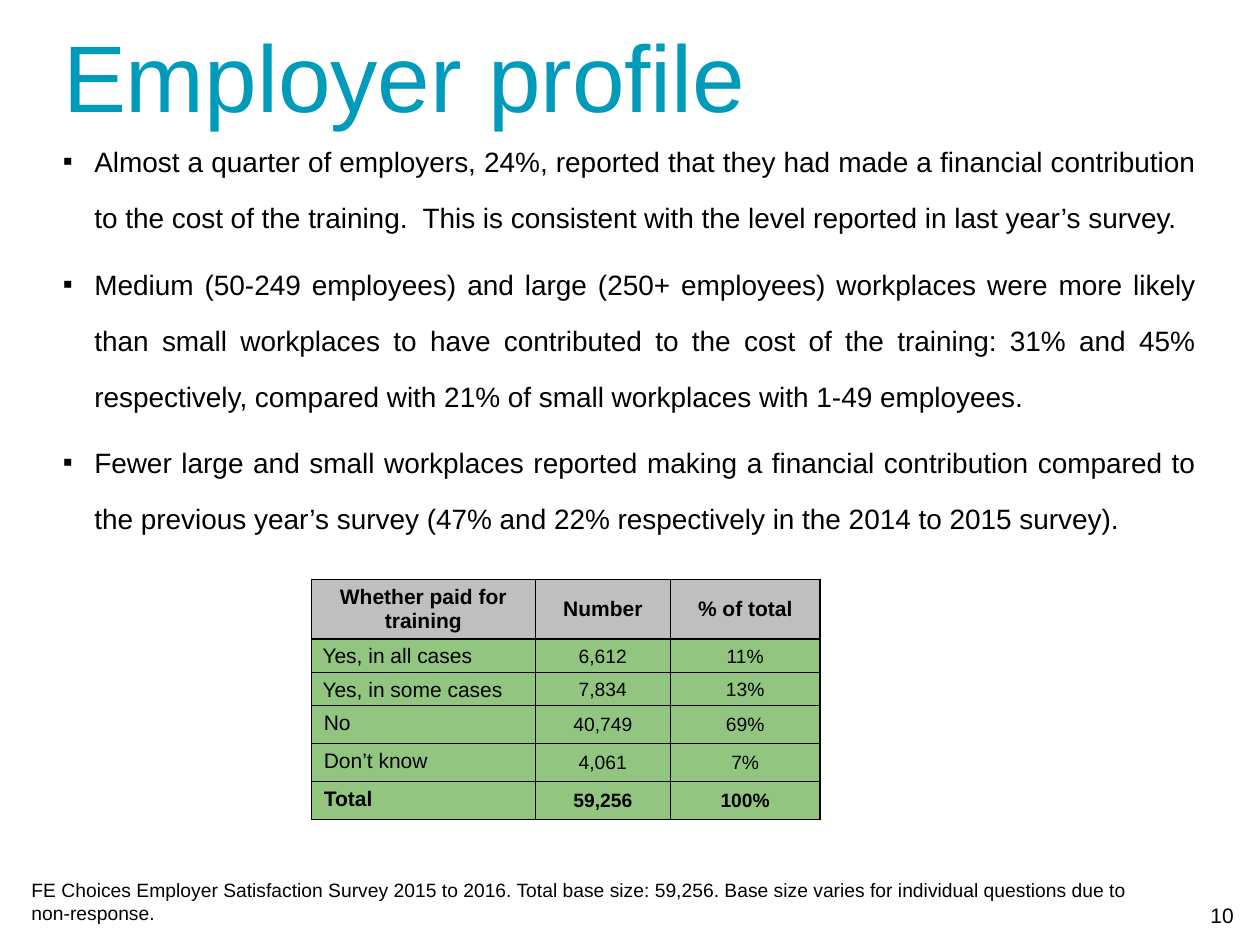
from typing import NamedTuple

from lxml.etree import SubElement
from pptx import Presentation
from pptx.dml.color import RGBColor
from pptx.enum.text import MSO_ANCHOR, MSO_AUTO_SIZE, PP_ALIGN
from pptx.oxml.ns import qn
from pptx.util import Inches, Pt

COLORS = {"title": "009BBB", "text": "000000", "header": "BFBFBF", "body": "92C680"}
FONT = "Arial"
GRID = Inches(0.1)  # the slide is 100 columns by 75 rows

BULLETS = [
    "Almost a quarter of employers, 24%, reported that they had made a financial "
    "contribution to the cost of the training.  This is consistent with the level "
    "reported in last year’s survey.",
    "Medium (50-249 employees) and large (250+ employees) workplaces were more likely "
    "than small workplaces to have contributed to the cost of the training: 31% and 45% "
    "respectively, compared with 21% of small workplaces with 1-49 employees.",
    "Fewer large and small workplaces reported making a financial contribution compared "
    "to the previous year’s survey (47% and 22% respectively in the 2014 to 2015 survey).",
]
SOURCE_NOTE = (
    "FE Choices Employer Satisfaction Survey 2015 to 2016. Total base size: 59,256. "
    "Base size varies for individual questions due to non-response."
)


class Area(NamedTuple):
    column: float
    row: float
    columns: float
    rows: float


class Insets(NamedTuple):
    left: float = 0
    top: float = 0
    right: float = 0
    bottom: float = 0


class PaymentRow(NamedTuple):
    answer: str
    number: str
    share: str
    height: float


BOX_INSETS = Insets(1, 0.5, 1, 0.5)
LABEL_INSETS = Insets(0.9, 0.1, 0.1, 0)
VALUE_INSETS = Insets(0.1, 0.1, 0.1, 0)
TABLE_AREA = Area(24.7, 46, 40.4, 19)
COLUMN_WIDTHS = [17.8, 10.7, 11.9]
PAYMENTS = [
    PaymentRow("Whether paid for training", "Number", "% of total", 4.7),
    PaymentRow("Yes, in all cases", "6,612", "11%", 2.7),
    PaymentRow("Yes, in some cases", "7,834", "13%", 2.6),
    PaymentRow("No", "40,749", "69%", 3),
    PaymentRow("Don’t know", "4,061", "7%", 3),
    PaymentRow("Total", "59,256", "100%", 3),
]


def grid(cells: float) -> int:
    return round(cells * GRID)


def place(shape, area: Area) -> None:
    shape.left, shape.top, shape.width, shape.height = map(grid, area)


def set_insets(holder, insets: Insets) -> None:
    """Set the margins of a text frame or a table cell."""
    holder.margin_left, holder.margin_top = grid(insets.left), grid(insets.top)
    holder.margin_right, holder.margin_bottom = grid(insets.right), grid(insets.bottom)


def write(frame, paragraphs: list[str], *, size: float, color: str = "text",
          bold: bool = False, align=PP_ALIGN.LEFT, line: float | None = None,
          after: float = 0, bullet: str = "") -> None:
    for index, wording in enumerate(paragraphs):
        paragraph = frame.add_paragraph() if index else frame.paragraphs[0]
        paragraph.alignment = align
        paragraph.space_before, paragraph.space_after = Pt(0), Pt(after)
        if line:
            paragraph.line_spacing = Pt(line)
        if bullet:
            properties = paragraph._p.get_or_add_pPr()
            properties.set("marL", str(Inches(0.25)))
            properties.set("indent", str(-Inches(0.25)))
            SubElement(properties, qn("a:buFont"), typeface=FONT)
            SubElement(properties, qn("a:buChar"), char=bullet)
        run = paragraph.add_run()
        run.text = wording
        run.font.name, run.font.size, run.font.bold = FONT, Pt(size), bold
        run.font.color.rgb = RGBColor.from_string(COLORS[color])


def add_text(slide, area: Area, paragraphs: list[str], *, insets: Insets = BOX_INSETS,
             anchor=MSO_ANCHOR.TOP, **text_format) -> None:
    frame = slide.shapes.add_textbox(*map(grid, area)).text_frame
    frame.word_wrap = True
    frame.vertical_anchor = anchor
    set_insets(frame, insets)
    write(frame, paragraphs, **text_format)


def set_borders(cell, **widths: float) -> None:
    """Draw the borders named L, R, T and B, given in that order in points."""
    properties = cell._tc.get_or_add_tcPr()
    for side, width in widths.items():
        border = SubElement(properties, qn(f"a:ln{side}"), w=str(Pt(width)))
        fill = SubElement(border, qn("a:solidFill"))
        SubElement(fill, qn("a:srgbClr"), val=COLORS["text"])


def add_payment_table(slide) -> None:
    table = slide.shapes.add_table(
        len(PAYMENTS), len(COLUMN_WIDTHS), *map(grid, TABLE_AREA)).table
    for column, width in zip(table.columns, COLUMN_WIDTHS):
        column.width = grid(width)
    for row, payment in enumerate(PAYMENTS):
        table.rows[row].height = grid(payment.height)
        header, total = row == 0, row == len(PAYMENTS) - 1
        for column, wording in enumerate(payment[:3]):
            cell = table.cell(row, column)
            label = column == 0 and not header
            top_label = label and row >= 3
            if header:
                insets = Insets()
            elif top_label:
                insets = BOX_INSETS
            else:
                insets = LABEL_INSETS if label else VALUE_INSETS
            set_insets(cell, insets)
            cell.vertical_anchor = MSO_ANCHOR.TOP if top_label else MSO_ANCHOR.MIDDLE
            set_borders(cell, L=0.5, R=1 if column == 2 else 0.5,
                        T=1 if row <= 1 else 0.5, B=1 if header else 0.5)
            cell.fill.solid()
            cell.fill.fore_color.rgb = RGBColor.from_string(
                COLORS["header" if header else "body"])
            write(cell.text_frame, [wording], size=12 if header or label else 11,
                  bold=header or total,
                  align=PP_ALIGN.LEFT if label else PP_ALIGN.CENTER)


def main() -> None:
    presentation = Presentation()
    presentation.slide_width, presentation.slide_height = grid(100), grid(75)
    slide = presentation.slides.add_slide(presentation.slide_layouts[5])

    title = slide.shapes.title
    place(title, Area(4, 0.9, 99.4, 19.2))
    title.text_frame.vertical_anchor = MSO_ANCHOR.TOP
    title.text_frame.auto_size = MSO_AUTO_SIZE.NONE
    set_insets(title.text_frame, BOX_INSETS)
    write(title.text_frame, ["Employer profile"], size=54, color="title", line=65)

    add_text(slide, Area(4, 9.2, 91.9, 24.2), BULLETS, size=16,
             align=PP_ALIGN.JUSTIFY, line=32, after=6, bullet="▪")
    add_text(slide, Area(78.1, 71.1, 20.8, 3.1), ["10"], size=12,
             align=PP_ALIGN.RIGHT, anchor=MSO_ANCHOR.MIDDLE)
    add_payment_table(slide)
    add_text(slide, Area(2.5, 69.7, 89.3, 5.6), [SOURCE_NOTE], size=11, insets=Insets())

    presentation.save("out.pptx")


if __name__ == "__main__":
    main()
